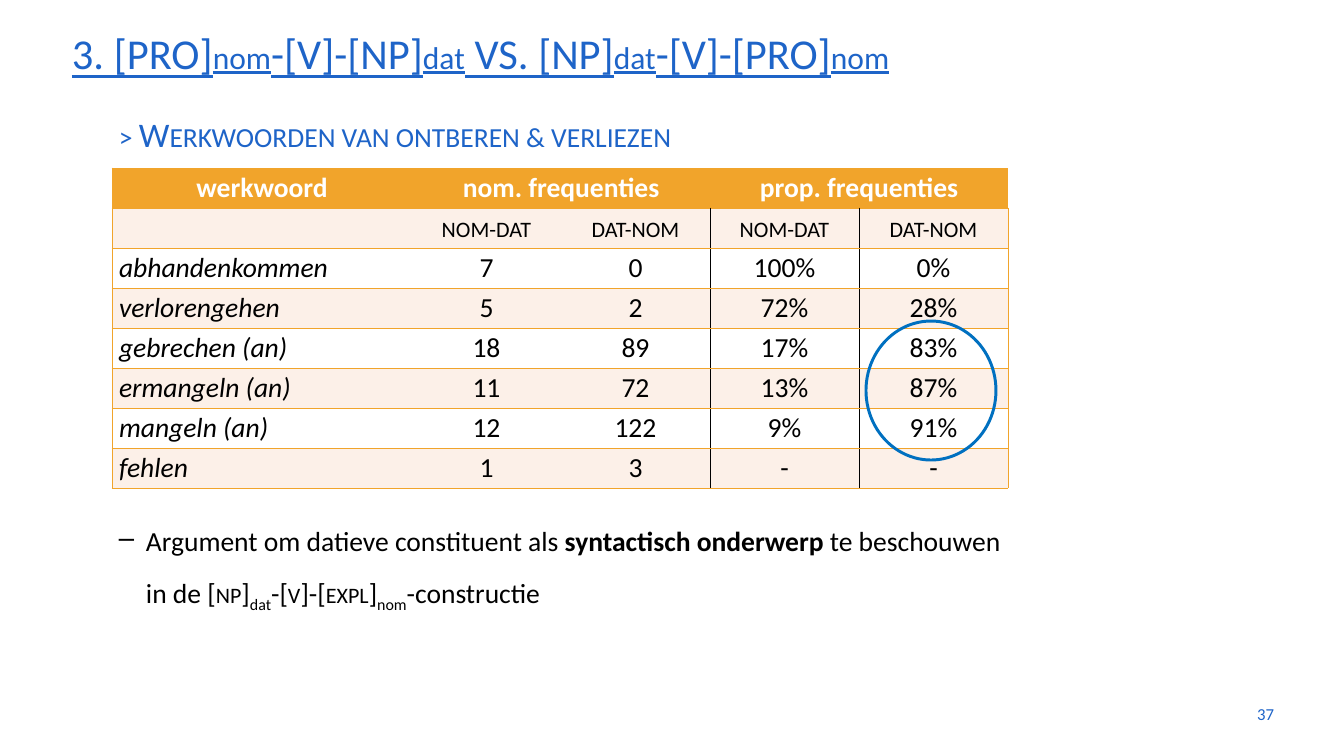
from lxml import etree
from pptx import Presentation
from pptx.dml.color import RGBColor
from pptx.enum.shapes import MSO_SHAPE
from pptx.enum.text import MSO_ANCHOR, PP_ALIGN
from pptx.oxml.ns import qn
from pptx.util import Pt

PX = 12900
FONT = "Calibri"
ELLIPSE = MSO_SHAPE.OVAL
TOP, MIDDLE = MSO_ANCHOR.TOP, MSO_ANCHOR.MIDDLE
LEFT, CENTER, RIGHT = PP_ALIGN.LEFT, PP_ALIGN.CENTER, PP_ALIGN.RIGHT

COLORS = {
    "blue": "1E64C8",
    "circle": "0070C0",
    "orange": "F1A42B",
    "band": "FCF0E8",
    "white": "FFFFFF",
    "black": "000000",
}

TITLE = [
    ("3. [pro]", "caps"), ("nom", "label"), ("-[v]-[np]", "caps"), ("dat", "label"),
    (" vs. [np]", "caps"), ("dat", "label"), ("-[v]-[pro]", "caps"), ("nom", "label"),
]
ARGUMENT = [
    ("Argument om datieve constituent als ", ""), ("syntactisch onderwerp ", "bold"),
    ("te beschouwen in de [", ""), ("np", "caps"), ("]", ""), ("dat", "sub"),
    ("-[", ""), ("v", "caps"), ("]-[", ""), ("expl", "caps"), ("]", ""),
    ("nom", "sub"), ("-constructie", ""),
]
ROWS = [
    ["werkwoord", "nom. frequenties", "", "prop. frequenties", ""],
    ["", "nom-dat", "dat-nom", "nom-dat", "dat-nom"],
    ["abhandenkommen", "7", "0", "100%", "0%"],
    ["verlorengehen", "5", "2", "72%", "28%"],
    ["gebrechen (an)", "18", "89", "17%", "83%"],
    ["ermangeln (an)", "11", "72", "13%", "87%"],
    ["mangeln (an)", "12", "122", "9%", "91%"],
    ["fehlen", "1", "3", "-", "-"],
]
COLUMN_WIDTHS = [300, 149, 149, 149, 149]
ROW_HEIGHT = 40


def px(*lengths):
    return [length * PX for length in lengths]


def rgb(name):
    return RGBColor.from_string(COLORS[name])


def style_paragraph(para, size, color, align=LEFT):
    para.alignment = align
    para.font.name = FONT
    para.font.size = Pt(size)
    para.font.color.rgb = rgb(color)


def add_span(para, text, style=""):
    """Append a run; style is caps, label, bold, sub or empty."""
    span = para.add_run()
    span.text = text
    if style == "caps":
        span._r.get_or_add_rPr().set("cap", "small")
    elif style == "label":
        span.font.size = Pt(32)
    elif style == "bold":
        span.font.bold = True
    elif style == "sub":
        span._r.get_or_add_rPr().set("baseline", "-25000")


def add_bullet(para, character, indent):
    properties = para._p.get_or_add_pPr()
    properties.set("marL", str(indent * PX))
    properties.set("indent", str(-indent * PX))
    etree.SubElement(properties, qn("a:buChar")).set("char", character)


def add_text(page, place, spans, size, color, align=LEFT, spacing=1.0,
             anchor=TOP, bullet=None):
    """Add a box with one paragraph and return that paragraph."""
    box = page.shapes.add_textbox(*px(*place))
    box.text_frame.word_wrap = True
    box.text_frame.vertical_anchor = anchor
    para = box.text_frame.paragraphs[0]
    if bullet:
        add_bullet(para, bullet, 27)
    para.line_spacing = spacing
    style_paragraph(para, size, color, align)
    for text, style in spans:
        add_span(para, text, style)
    return para


def set_borders(cell, **sides):
    """Draw the sides L, R, T and B in the named colours; None hides a side."""
    properties = cell._tc.get_or_add_tcPr()
    for position, side in enumerate("LRTB"):
        line = etree.Element(qn(f"a:ln{side}"), w=str(Pt(1)))
        if sides[side]:
            fill = etree.SubElement(line, qn("a:solidFill"))
            etree.SubElement(fill, qn("a:srgbClr")).set("val", COLORS[sides[side]])
        else:
            etree.SubElement(line, qn("a:noFill"))
        properties.insert(position, line)


def vertical_color(row, edge):
    if edge in (0, len(COLUMN_WIDTHS)):
        return "orange"
    return "black" if row > 0 and edge in (3, 4) else None


def fill_cell(cell, text, row, column):
    header = row == 0
    cell.margin_top = cell.margin_bottom = 3 * PX
    cell.fill.solid()
    cell.fill.fore_color.rgb = rgb("orange" if header else "band" if row % 2 else "white")
    set_borders(cell, L=vertical_color(row, column), R=vertical_color(row, column + 1),
                T="orange", B="orange")
    para = cell.text_frame.paragraphs[0]
    verb = row > 1 and column == 0
    style_paragraph(para, 28, "white" if header else "black", LEFT if verb else CENTER)
    para.font.bold = header
    para.font.italic = verb
    if text:
        add_span(para, text, "caps" if row == 1 else "")


def add_frequency_table(page, left, top):
    place = px(left, top, sum(COLUMN_WIDTHS), ROW_HEIGHT * len(ROWS))
    table = page.shapes.add_table(len(ROWS), len(COLUMN_WIDTHS), *place).table
    table.first_row = table.horz_banding = False
    for column, width in zip(table.columns, COLUMN_WIDTHS):
        column.width = width * PX
    for row, texts in enumerate(ROWS):
        table.rows[row].height = ROW_HEIGHT * PX
        for column, text in enumerate(texts):
            fill_cell(table.cell(row, column), text, row, column)
    for column in (1, 3):
        table.cell(0, column).merge(table.cell(0, column + 1))


def add_circle(page, place):
    circle = page.shapes.add_shape(ELLIPSE, *px(*place))
    circle.shadow.inherit = False
    circle.fill.background()
    circle.line.color.rgb = rgb("circle")
    circle.line.width = Pt(3)


def main():
    deck = Presentation()
    deck.slide_width, deck.slide_height = px(1344, 756)
    page = deck.slides.add_slide(deck.slide_layouts[6])
    title = add_text(page, (65, 20, 1218, 67), TITLE, 54, "blue", spacing=0.9)
    title.font.underline = True
    add_text(page, (1209, 694, 72, 40), [("37", "")], 17, "blue", RIGHT, anchor=MIDDLE)
    add_text(page, (112, 101, 658, 53), [("> Werkwoorden van ontberen & verliezen", "caps")],
             35, "blue", spacing=1.2)
    add_frequency_table(page, 112, 168)
    add_circle(page, (866, 321, 130, 139))
    add_text(page, (112, 504, 896, 101), ARGUMENT, 28, "black", spacing=1.5, bullet="–")
    deck.save("out.pptx")


if __name__ == "__main__":
    main()
